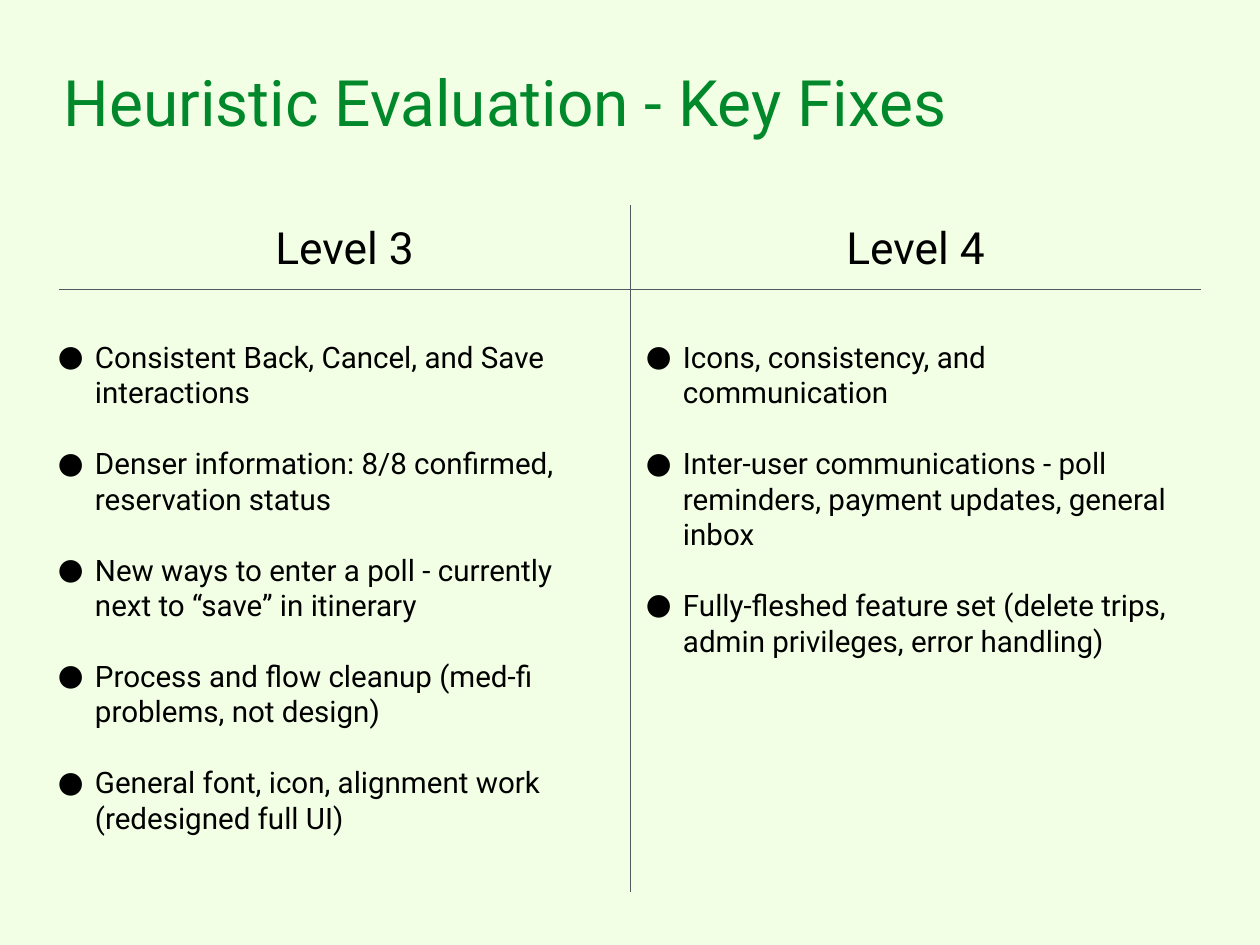
"""Build the slide that lists the key fixes from the heuristic evaluation."""
from lxml import etree
from pptx import Presentation
from pptx.dml.color import RGBColor
from pptx.enum.shapes import MSO_CONNECTOR
from pptx.enum.text import MSO_ANCHOR, PP_ALIGN
from pptx.oxml.ns import qn
from pptx.util import Pt

STRAIGHT = MSO_CONNECTOR.STRAIGHT
TOP, MIDDLE = MSO_ANCHOR.TOP, MSO_ANCHOR.MIDDLE
LEFT, CENTER = PP_ALIGN.LEFT, PP_ALIGN.CENTER

PX = 10320
THEME = {
    "font": "Roboto",
    "background": "F2FFE5",
    "title": "00882B",
    "text": "000000",
    "rule": "53585F",
    "title_size": 52,
    "heading_size": 36,
    "fix_size": 24,
    "fix_gap": 28.8,
    "rule_width": 0.75,
}

MARGIN, MIDLINE, RIGHT_EDGE = 59, 630, 1201
COLUMN_WIDTH = RIGHT_EDGE - MIDLINE
TABLE_TOP, HEADING_RULE, TABLE_BOTTOM = 205, 289, 892
FIXES_TOP = 330
INDENT, HANGING = 44, 37

COLUMNS = [
    ("Level 3", MARGIN, 42, [
        "Consistent Back, Cancel, and Save interactions",
        "Denser information: 8/8 confirmed, reservation status",
        "New ways to enter a poll - currently next to “save” in itinerary",
        "Process and flow cleanup (med-fi problems, not design)",
        "General font, icon, alignment work (redesigned full UI)",
    ]),
    ("Level 4", MIDLINE, MIDLINE, [
        "Icons, consistency, and communication",
        "Inter-user communications - poll reminders, payment updates, general inbox",
        "Fully-fleshed feature set (delete trips, admin privileges, error handling)",
    ]),
]


def add_text(box, lines, size, color, inset=9, anchor=MIDDLE, align=LEFT):
    """Add a text box with one paragraph per line and return its paragraphs."""
    frame = slide.shapes.add_textbox(*(n * PX for n in box)).text_frame
    frame.word_wrap = True
    frame.vertical_anchor = anchor
    frame.margin_left = frame.margin_right = inset * PX
    frame.margin_top = frame.margin_bottom = inset * PX
    frame.text = "\n".join(lines)
    for paragraph in frame.paragraphs:
        paragraph.alignment = align
        font = paragraph.runs[0].font
        font.name = THEME["font"]
        font.size = Pt(THEME[size])
        font.color.rgb = RGBColor.from_string(THEME[color])
    return frame.paragraphs


def add_bullet(paragraph):
    """Give a paragraph a round bullet with a hanging indent."""
    properties = paragraph._p.get_or_add_pPr()
    properties.set("marL", str(INDENT * PX))
    properties.set("indent", str(-HANGING * PX))
    bullet_color = etree.SubElement(properties, qn("a:buClr"))
    etree.SubElement(bullet_color, qn("a:srgbClr"), val=THEME["text"])
    etree.SubElement(properties, qn("a:buFont"), typeface=THEME["font"])
    etree.SubElement(properties, qn("a:buChar"), char="●")


prs = Presentation()
prs.slide_width, prs.slide_height = 1260 * PX, 945 * PX
slide = prs.slides.add_slide(prs.slide_layouts[6])
slide.background.fill.solid()
slide.background.fill.fore_color.rgb = RGBColor.from_string(THEME["background"])

add_text((MARGIN, 54, 1171, 94), ["Heuristic Evaluation - Key Fixes"],
         "title_size", "title", inset=5)

for ends in [(MARGIN, HEADING_RULE, RIGHT_EDGE, HEADING_RULE),
             (MIDLINE, TABLE_TOP, MIDLINE, TABLE_BOTTOM)]:
    rule = slide.shapes.add_connector(STRAIGHT, *(n * PX for n in ends))
    rule.line.color.rgb = RGBColor.from_string(THEME["rule"])
    rule.line.width = Pt(THEME["rule_width"])
    etree.SubElement(rule._element.spPr, qn("a:effectLst"))

for heading, heading_left, fixes_left, fixes in COLUMNS:
    add_text((heading_left, TABLE_TOP, COLUMN_WIDTH, HEADING_RULE - TABLE_TOP),
             [heading], "heading_size", "text", align=CENTER)
    fix_paragraphs = add_text(
        (fixes_left, FIXES_TOP, COLUMN_WIDTH, TABLE_BOTTOM - FIXES_TOP),
        fixes, "fix_size", "text", anchor=TOP)
    for position, fix in enumerate(fix_paragraphs):
        add_bullet(fix)
        if position:
            fix.space_before = Pt(THEME["fix_gap"])

prs.save("out.pptx")
